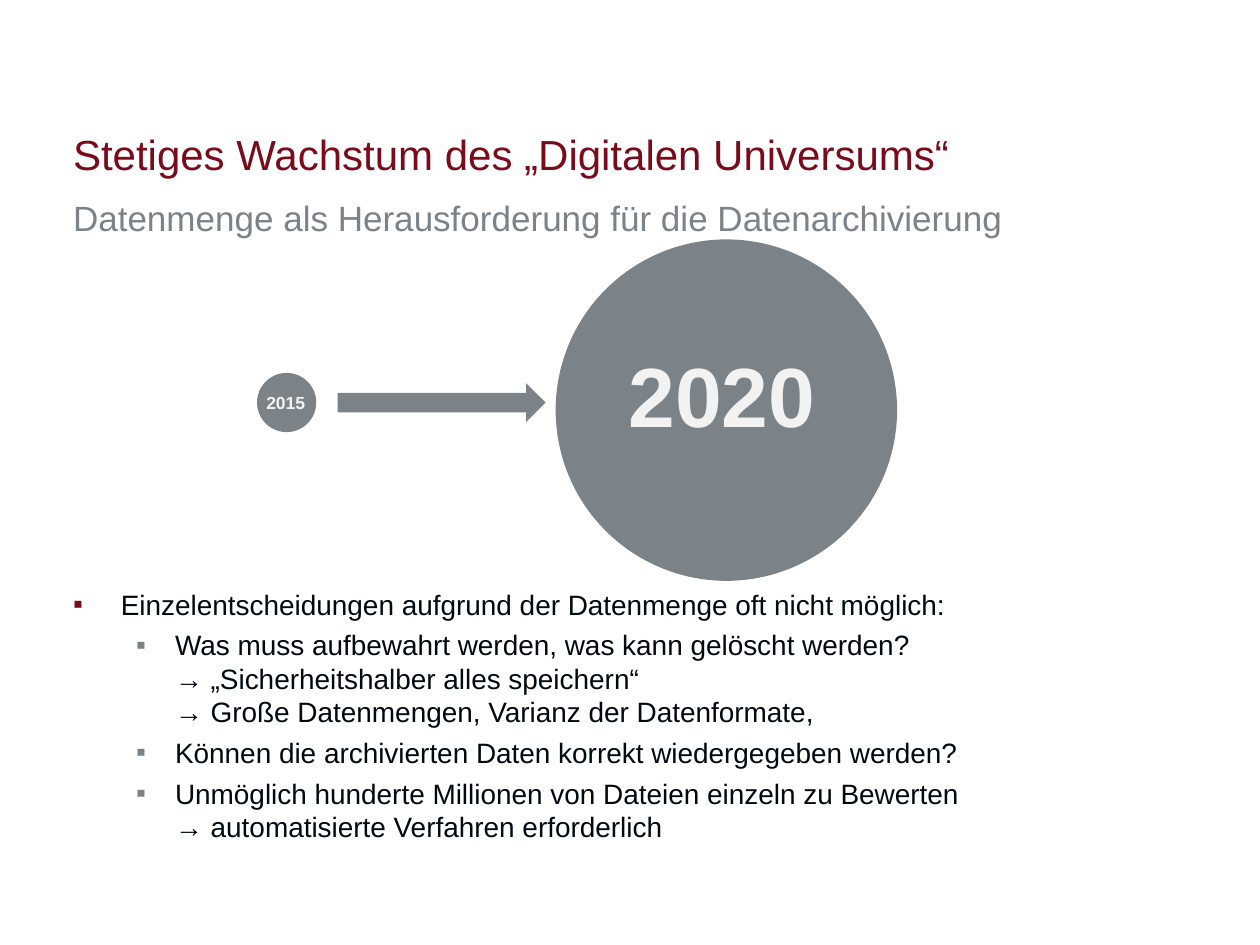
from copy import deepcopy

from pptx import Presentation
from pptx.dml.color import RGBColor
from pptx.enum.shapes import MSO_SHAPE as Shape
from pptx.enum.text import MSO_ANCHOR as Anchor, PP_ALIGN as Align
from pptx.oxml.ns import qn
from pptx.util import Inches, Pt
from lxml.etree import SubElement

RED = RGBColor(0x79, 0x0B, 0x1A)
GRAY = RGBColor(0x7C, 0x83, 0x88)
INK = RGBColor(0x00, 0x0A, 0x10)
PALE = RGBColor(0xF2, 0xF2, 0xF2)

POINTS = [
    (0, "Einzelentscheidungen aufgrund der Datenmenge oft nicht möglich:"),
    (1, "Was muss aufbewahrt werden, was kann gelöscht werden?\v"
        "→ „Sicherheitshalber alles speichern“\v"
        "→ Große Datenmengen, Varianz der Datenformate,"),
    (1, "Können die archivierten Daten korrekt wiedergegeben werden?"),
    (1, "Unmöglich hunderte Millionen von Dateien einzeln zu Bewerten\v"
        "→ automatisierte Verfahren erforderlich"),
]
LEVELS = [(0.38, 0.38, RED), (0.81, 0.31, GRAY)]


def write(paragraph, text, size=16, color=INK, bold=False, align=Align.LEFT):
    paragraph.text = text
    paragraph.alignment = align
    for run in paragraph.runs:
        run.font.name = "Arial"
        run.font.size = Pt(size)
        run.font.bold = bold
        run.font.color.rgb = color
    run_format = paragraph.runs[0].font._element
    for line_break in paragraph._p.findall(qn("a:br")):
        line_break.append(deepcopy(run_format))


def add_bullet(paragraph, level):
    margin, hanging, color = LEVELS[level]
    properties = paragraph._p.get_or_add_pPr()
    properties.set("marL", str(Inches(margin)))
    properties.set("indent", str(-Inches(hanging)))
    bullet_color = SubElement(properties, qn("a:buClr"))
    SubElement(bullet_color, qn("a:srgbClr")).set("val", str(color))
    SubElement(properties, qn("a:buFont")).set("typeface", "Arial")
    SubElement(properties, qn("a:buChar")).set("char", "▪")


class SlideBuilder:
    def __init__(self, slide):
        self.slide = slide

    def frame(self, left, top, width, height, inset=0, anchor=Anchor.TOP, wrap=True):
        box = self.slide.shapes.add_textbox(
            Inches(left), Inches(top), Inches(width), Inches(height))
        frame = box.text_frame
        frame.word_wrap = wrap
        frame.vertical_anchor = anchor
        frame.margin_left = frame.margin_right = Inches(inset)
        frame.margin_top = frame.margin_bottom = Inches(inset / 2)
        return frame

    def heading(self, text, top, height, size, color, anchor=Anchor.TOP):
        frame = self.frame(0.58, top, 8.84, height, anchor=anchor)
        write(frame.paragraphs[0], text, size=size, color=color)

    def year(self, text, left, top, width, height, size):
        frame = self.frame(left, top, width, height, inset=0.1, wrap=False)
        write(frame.paragraphs[0], text, size=size, color=PALE, bold=True,
              align=Align.RIGHT)

    def solid(self, kind, left, top, width, height):
        shape = self.slide.shapes.add_shape(
            kind, Inches(left), Inches(top), Inches(width), Inches(height))
        shape.shadow.inherit = False
        shape.fill.solid()
        shape.fill.fore_color.rgb = GRAY
        shape.line.fill.background()

    def bullets(self, points, left, top, width, height):
        frame = self.frame(left, top, width, height)
        for index, (level, text) in enumerate(points):
            paragraph = frame.add_paragraph() if index else frame.paragraphs[0]
            write(paragraph, text)
            paragraph.level = level
            if index:
                paragraph.space_before = Pt(4)
            add_bullet(paragraph, level)


def main():
    deck = Presentation()
    deck.slide_width, deck.slide_height = Inches(10), Inches(7.5)
    builder = SlideBuilder(deck.slides.add_slide(deck.slide_layouts[6]))

    builder.heading("Stetiges Wachstum des „Digitalen Universums“",
                    1.02, 0.56, 24, RED)
    builder.heading("Datenmenge als Herausforderung für die Datenarchivierung",
                    1.47, 0.42, 20, GRAY, anchor=Anchor.BOTTOM)
    builder.bullets(POINTS, 0.58, 4.66, 8.83, 2.22)

    builder.solid(Shape.OVAL, 2.04, 2.96, 0.47, 0.47)
    builder.year("2015", 2.01, 3.06, 0.51, 0.27, 10)
    builder.solid(Shape.OVAL, 4.41, 1.9, 2.71, 2.71)
    builder.year("2020", 4.87, 2.68, 1.7, 0.91, 48)
    builder.solid(Shape.RIGHT_ARROW, 2.68, 3.04, 1.65, 0.31)

    deck.save("out.pptx")


if __name__ == "__main__":
    main()
